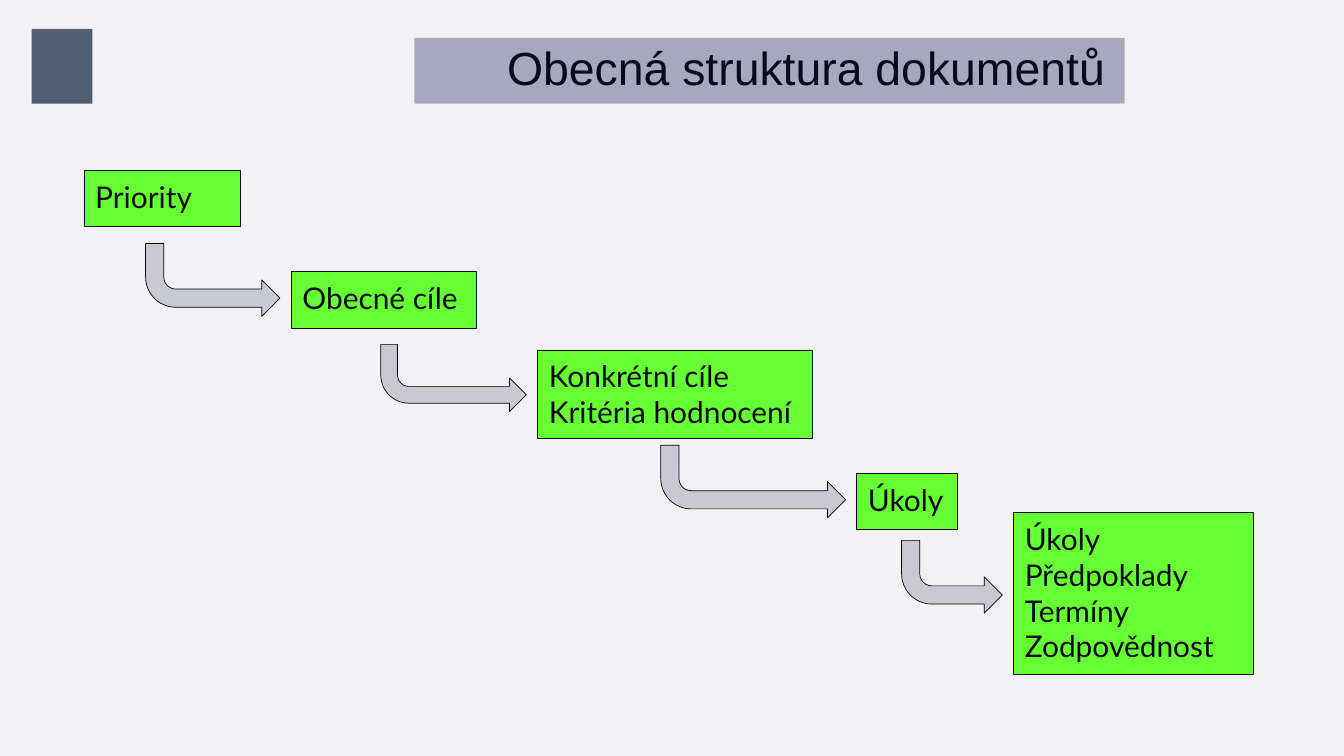
import pptx
import pptx.dml.color
import pptx.enum.shapes
import pptx.enum.text
import pptx.util

Pt = pptx.util.Pt
RGBColor = pptx.dml.color.RGBColor
MSO_SHAPE = pptx.enum.shapes.MSO_SHAPE
MSO_ANCHOR = pptx.enum.text.MSO_ANCHOR
MSO_AUTO_SIZE = pptx.enum.text.MSO_AUTO_SIZE
PP_ALIGN = pptx.enum.text.PP_ALIGN

BACKGROUND = RGBColor(0xF2, 0xF2, 0xF5)
INK = RGBColor(0x0A, 0x09, 0x1B)
TITLE_BAR = RGBColor(0xA8, 0xA8, 0xBC)
GREEN = RGBColor(0x66, 0xFF, 0x33)
ARROW = RGBColor(0xC9, 0xC9, 0xD5)
BLACK = RGBColor(0x00, 0x00, 0x00)
EMBLEM = RGBColor(0x4F, 0x60, 0x6E)

# Each level: left, top, width, height in points, then its lines
LEVELS = [
    ((90, 183, 168, 60), ["Priority"]),
    ((312, 291, 198, 61), ["Obecné cíle"]),
    ((576, 375, 294, 95), ["Konkrétní cíle", "Kritéria hodnocení"]),
    ((918, 507, 108, 60), ["Úkoly"]),
    ((1086, 549, 256.5, 174), ["Úkoly", "Předpoklady", "Termíny", "Zodpovědnost"]),
]
# Each arrow leads from one level to the next: left, top, width, height
ARROWS = [
    (156, 261, 144, 78),
    (408, 369, 156, 72),
    (708, 477, 198, 78),
    (966, 579, 108, 78),
]


class SlideBuilder:
    title_font, title_size = "Arial", 49.7
    body_font, body_size = "Lato", 32
    line_width = 0.75

    def __init__(self, presentation):
        self.slide = presentation.slides.add_slide(presentation.slide_layouts[5])
        fill = self.slide.background.fill
        fill.solid()
        fill.fore_color.rgb = BACKGROUND

    def shape(self, kind, box, color, line_color=None):
        shape = self.slide.shapes.add_shape(kind, *map(Pt, box))
        shape.shadow.inherit = False
        shape.fill.solid()
        shape.fill.fore_color.rgb = color
        if line_color is None:
            shape.line.fill.background()
        else:
            shape.line.color.rgb = line_color
            shape.line.width = Pt(self.line_width)
        return shape

    def frame(self, shape, anchor, margins):
        frame = shape.text_frame
        frame.word_wrap = True
        frame.auto_size = MSO_AUTO_SIZE.NONE
        frame.vertical_anchor = anchor
        (frame.margin_left, frame.margin_top,
         frame.margin_right, frame.margin_bottom) = map(Pt, margins)
        return frame

    def run(self, paragraph, text, font, size):
        run = paragraph.add_run()
        run.text = text
        run.font.name = font
        run.font.size = Pt(size)
        run.font.color.rgb = INK

    def title(self, text, box):
        title = self.slide.shapes.title
        title.left, title.top, title.width, title.height = map(Pt, box)
        title.fill.solid()
        title.fill.fore_color.rgb = TITLE_BAR
        frame = self.frame(title, MSO_ANCHOR.MIDDLE, (7.2, 3.6, 21, 3.6))
        paragraph = frame.paragraphs[0]
        paragraph.alignment = PP_ALIGN.RIGHT
        paragraph.line_spacing = 0.9
        self.run(paragraph, text, self.title_font, self.title_size)

    def level(self, box, lines):
        shape = self.shape(MSO_SHAPE.RECTANGLE, box, GREEN, INK)
        frame = self.frame(shape, MSO_ANCHOR.TOP, (12, 8.64, 0, 3.6))
        for index, line in enumerate(lines):
            paragraph = frame.add_paragraph() if index else frame.paragraphs[0]
            paragraph.alignment = PP_ALIGN.LEFT
            self.run(paragraph, line, self.body_font, self.body_size)

    def arrow(self, box):
        arrow = self.shape(MSO_SHAPE.BENT_ARROW, box, ARROW, BLACK)
        for index, value in enumerate((0.25, 0.25, 0.25, 0.416)):
            arrow.adjustments[index] = value
        arrow.element.spPr.xfrm.set("flipV", "1")


def main():
    presentation = pptx.Presentation()
    presentation.slide_width = Pt(1440)
    presentation.slide_height = Pt(810)
    builder = SlideBuilder(presentation)

    # Header
    builder.shape(MSO_SHAPE.RECTANGLE, (34, 31, 65, 80), EMBLEM)
    builder.title("Obecná struktura dokumentů", (444, 40.5, 761, 70.5))

    # Staircase of levels
    for box, lines in LEVELS:
        builder.level(box, lines)
    for box in ARROWS:
        builder.arrow(box)

    presentation.save("out.pptx")


if __name__ == "__main__":
    main()
